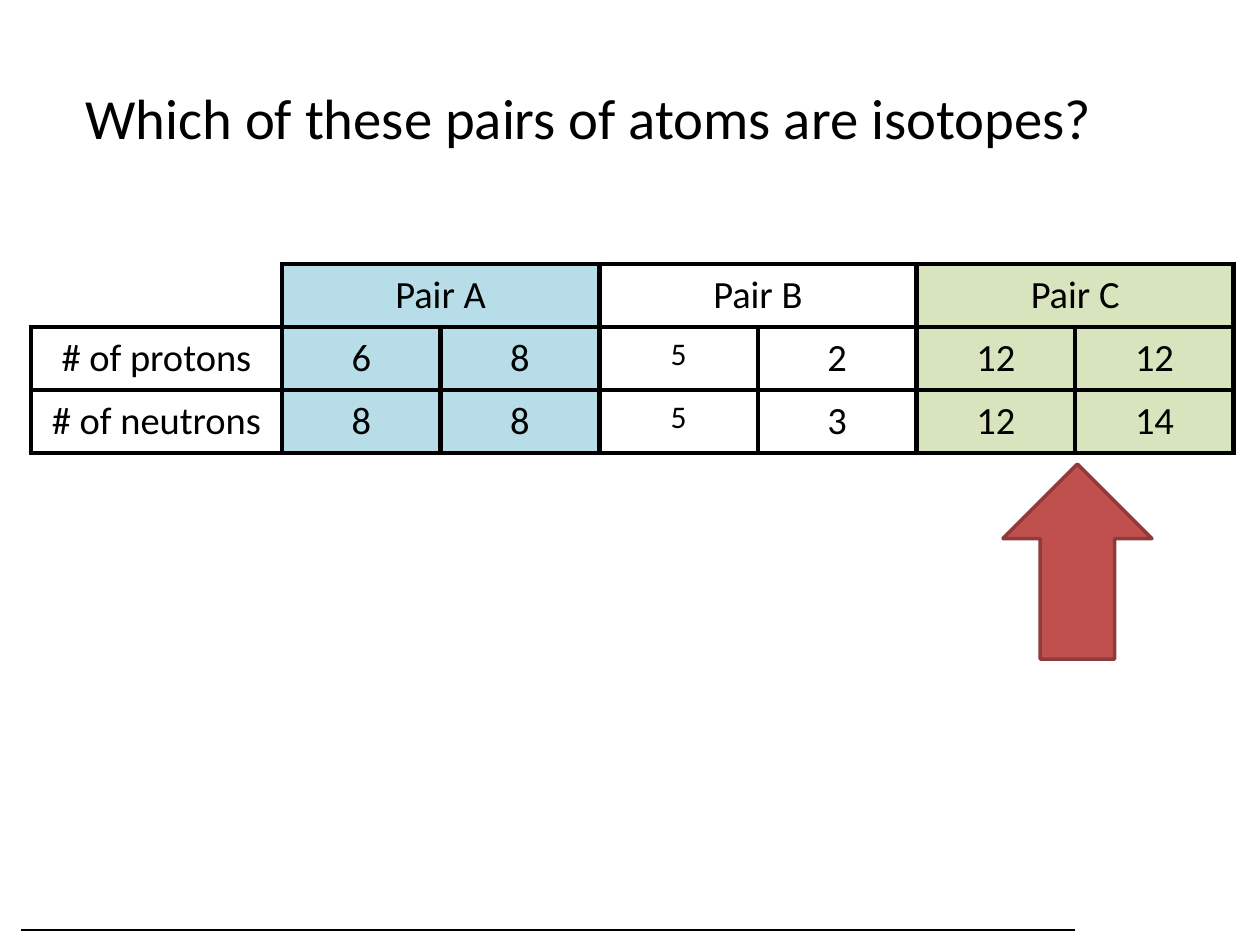
from pptx import Presentation
from pptx.dml.color import RGBColor
from pptx.enum.shapes import MSO_CONNECTOR as Conn, MSO_SHAPE as Shape
from pptx.enum.text import MSO_ANCHOR as Anchor, PP_ALIGN as Align
from pptx.oxml.ns import qn
from pptx.util import Emu, Pt
from lxml.etree import SubElement as Sub

SCALE = 914400 / 126
BLACK = RGBColor(0x00, 0x00, 0x00)
WHITE = RGBColor(0xFF, 0xFF, 0xFF)
BLUE = RGBColor(0xB7, 0xDE, 0xE8)
GREEN = RGBColor(0xD7, 0xE4, 0xBD)
RED = RGBColor(0xC0, 0x50, 0x4D)
MAROON = RGBColor(0x8E, 0x3B, 0x39)

PAIRS = [("Pair A", BLUE), ("Pair B", WHITE), ("Pair C", GREEN)]
ROWS = [
    ("# of protons", "6", "8", "5", "2", "12", "12"),
    ("# of neutrons", "8", "8", "5", "3", "12", "14"),
]


def px(n):
    return Emu(round(n * SCALE))


def write(frame, text, size=22, color=BLACK, align=Align.CENTER):
    para = frame.paragraphs[0]
    para.alignment = align
    run = para.add_run()
    run.text = text
    run.font.size = Pt(size)
    run.font.name = "Calibri"
    run.font.color.rgb = color


def edge(cell, bare=""):
    props = cell._tc.get_or_add_tcPr()
    for side in "LRTB":
        line = Sub(props, qn(f"a:ln{side}"), w=str(Pt(3)))
        if side in bare:
            Sub(line, qn("a:noFill"))
        else:
            fill = Sub(line, qn("a:solidFill"))
            Sub(fill, qn("a:srgbClr"), val=str(BLACK))


def paint(cell, color):
    cell.fill.solid()
    cell.fill.fore_color.rgb = color
    cell.margin_left = cell.margin_right = px(15)
    cell.margin_top = cell.margin_bottom = px(8)


def title(slide, x, y, w, h):
    frame = slide.shapes.add_textbox(px(x), px(y), px(w), px(h)).text_frame
    frame.word_wrap = True
    frame.vertical_anchor = Anchor.MIDDLE
    write(frame, "Which of these pairs of atoms are isotopes?",
          size=32.4, align=Align.LEFT)


def grid(slide, x, y, w, h):
    count = len(ROWS) + 1
    wide = 2 * len(PAIRS) + 1
    table = slide.shapes.add_table(
        count, wide, px(x), px(y), px(w), px(h)).table
    table.first_row = table.horz_banding = False
    first = 251
    for i, col in enumerate(table.columns):
        col.width = px((w - first) / (wide - 1) if i else first)
    for row in table.rows:
        row.height = px(h / count)

    for r in range(count):
        for c in range(wide):
            cell = table.cell(r, c)
            edge(cell, "" if r or c else "LT")
            paint(cell, PAIRS[(c - 1) // 2][1] if c else WHITE)
    for i, (name, _) in enumerate(PAIRS):
        head = table.cell(0, 2 * i + 1)
        head.merge(table.cell(0, 2 * i + 2))
        write(head.text_frame, name)
    for r, row in enumerate(ROWS, 1):
        for c, text in enumerate(row):
            write(table.cell(r, c).text_frame, text, size=18 if c == 3 else 22)


def arrow(slide, x, y, w, h):
    shape = slide.shapes.add_shape(Shape.UP_ARROW, px(x), px(y), px(w), px(h))
    shape.shadow.inherit = False
    shape.fill.solid()
    shape.fill.fore_color.rgb = RED
    shape.line.color.rgb = MAROON
    shape.line.width = Pt(2)


def rule(slide, x, y, w):
    line = slide.shapes.add_connector(
        Conn.STRAIGHT, px(x), px(y), px(x + w), px(y))
    line.line.color.rgb = BLACK
    line.line.width = Pt(0.75)
    Sub(line._element.spPr, qn("a:effectLst"))


def main():
    deck = Presentation()
    deck.slide_width, deck.slide_height = px(1260), px(945)
    slide = deck.slides.add_slide(deck.slide_layouts[6])
    rule(slide, 21, 930, 1054)
    title(slide, 73, 38, 1134, 158)
    grid(slide, 31, 264, 1203, 189)
    arrow(slide, 1003, 464, 149, 195)
    deck.save("out.pptx")


if __name__ == "__main__":
    main()
